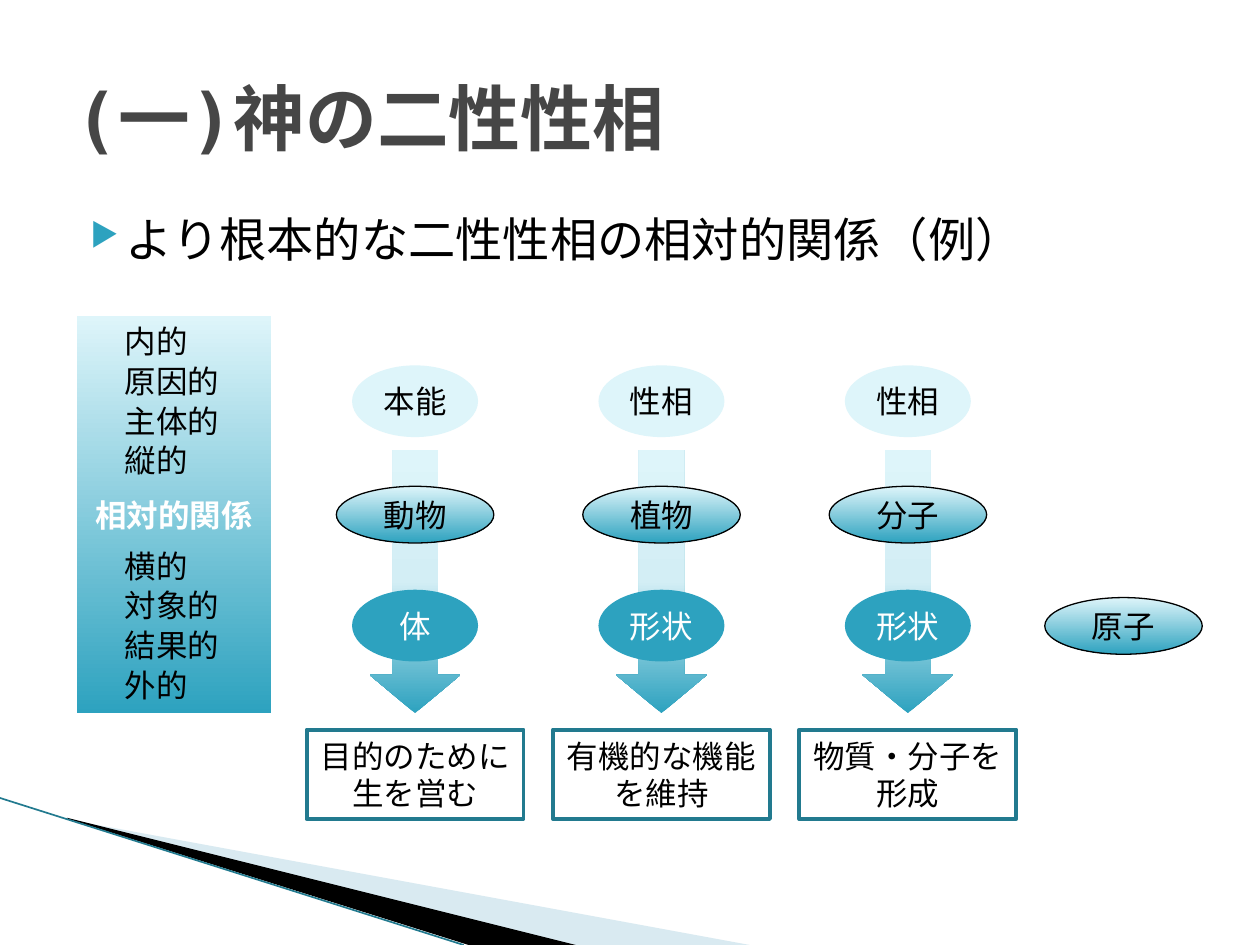
"""Build the slide on the dual characteristics and their relative relationships."""
from dataclasses import dataclass
from typing import NamedTuple, Optional

from lxml.etree import SubElement
from pptx import Presentation
from pptx.dml.color import RGBColor as RGB
from pptx.enum.shapes import MSO_CONNECTOR as Conn, MSO_SHAPE as Shape
from pptx.enum.text import MSO_ANCHOR as Anchor, PP_ALIGN as Align
from pptx.oxml.ns import qn
from pptx.util import Pt


@dataclass(frozen=True)
class Theme:
    pale: str = "DEF5FA"
    mist: str = "D3EEF5"
    teal: str = "2DA2BF"
    edge: str = "227A8F"
    wedge: str = "A0CBDC"
    title: str = "464646"
    black: str = "000000"
    white: str = "FFFFFF"
    font: str = "Arial"
    head_font: str = "DejaVu Sans Mono"
    title_size: int = 41
    body_size: int = 27
    label_size: int = 18


class Box(NamedTuple):
    x: float
    y: float
    w: float
    h: float


class Gradient(NamedTuple):
    stops: tuple
    angle: int


class Column(NamedTuple):
    upper: str
    name: str
    lower: str
    note: str


T = Theme()
DOWNWARD = Gradient(((0, T.pale), (100, T.teal)), 270)
ARROW = Gradient(((0, T.teal), (50, T.mist), (100, T.pale)), 90)
COLUMNS = (
    Column("本能", "動物", "体", "目的のために生を営む"),
    Column("性相", "植物", "形状", "有機的な機能を維持"),
    Column("性相", "分子", "形状", "物質・分子を形成"),
)
COLUMN_X, COLUMN_PITCH = 237.2, 140.8
LABEL_PITCH = 22.65
LABELS = (
    (180.7, ("内的", "原因的", "主体的", "縦的")),
    (308.9, ("横的", "対象的", "結果的", "外的")),
)


def write(sp, text: str, align=Align.CENTER, anchor=Anchor.MIDDLE, wrap=False, **formats):
    tf = sp.text_frame
    tf.word_wrap, tf.vertical_anchor = wrap, anchor
    p = tf.paragraphs[0]
    p.alignment = align
    r = p.add_run()
    r.text = text
    values = {"name": T.font, "size": T.label_size, "bold": False, **formats}
    r.font.color.rgb = RGB.from_string(values.pop("color", T.black))
    values["size"] = Pt(values["size"])
    for key, value in values.items():
        setattr(r.font, key, value)
    return p


def paint(sp, fill=None, line: Optional[str] = None, width: float = 0.75) -> None:
    sp.shadow.inherit = False
    if isinstance(fill, Gradient):
        sp.fill.gradient()
        sp.fill.gradient_angle = fill.angle
        stops = sp._element.spPr.find(".//" + qn("a:gsLst"))
        for old in list(stops):
            stops.remove(old)
        for pos, color in fill.stops:
            gs = SubElement(stops, qn("a:gs"), pos=str(pos * 1000))
            SubElement(gs, qn("a:srgbClr"), val=color)
    elif fill:
        sp.fill.solid()
        sp.fill.fore_color.rgb = RGB.from_string(fill)
    else:
        sp.fill.background()
    if line:
        sp.line.color.rgb = RGB.from_string(line)
        sp.line.width = Pt(width)
    else:
        sp.line.fill.background()


def add_shape(s, kind, box: Box, fill=None, line=None, width: float = 0.75):
    sp = s.shapes.add_shape(kind, *map(Pt, box))
    paint(sp, fill, line, width)
    return sp


def add_text(s, box: Box, text: str, **formats):
    return write(s.shapes.add_textbox(*map(Pt, box)), text, align=Align.LEFT, **formats)


def add_wedge(s, points: tuple, color: str):
    builder = s.shapes.build_freeform(*map(Pt, points[0]), scale=1.0)
    builder.add_line_segments([(Pt(x), Pt(y)) for x, y in points[1:]])
    sp = builder.convert_to_shape()
    paint(sp, color)
    return sp


def add_decoration(s) -> None:
    sp = add_wedge(s, ((39.6, 468.5), (428.4, 540), (328.3, 540), (39.6, 468)), T.wedge)
    SubElement(sp._element.spPr.find(".//" + qn("a:srgbClr")), qn("a:alpha"), val="40000")
    add_wedge(s, ((38.2, 467.3), (329, 540), (267.8, 540), (38.9, 468)), T.black)
    line = s.shapes.add_connector(Conn.STRAIGHT, Pt(0), Pt(456), Pt(265), Pt(540))
    line.line.color.rgb = RGB.from_string(T.edge)
    line.line.width = Pt(0.95)
    SubElement(line._element.spPr, qn("a:effectLst"))


def add_headings(s) -> None:
    p = add_text(s, Box(36, 116.6, 648, 356.4), "より根本的な二性性相の相対的関係（例）",
                 anchor=Anchor.TOP, wrap=True, name=T.head_font, size=T.body_size)
    pPr = p._p.get_or_add_pPr()
    for key, value in {"marL": Pt(28.8), "indent": Pt(-20.16)}.items():
        pPr.set(key, str(int(value)))
    SubElement(SubElement(pPr, qn("a:buClr")), qn("a:srgbClr"), val=T.teal)
    SubElement(pPr, qn("a:buSzPct"), val="68000")
    SubElement(pPr, qn("a:buChar"), char="▶")
    add_text(s, Box(36, 21.6, 648, 90), "(一)神の二性性相", wrap=True,
             name=T.head_font, size=T.title_size, bold=True, color=T.title)


def add_name(s, center: float, y: float, text: str) -> None:
    write(add_shape(s, Shape.OVAL, Box(center - 45, y, 90, 32.4), DOWNWARD, T.black), text)


def add_column(s, center: float, column: Column) -> None:
    arrow = add_shape(s, Shape.DOWN_ARROW, Box(center - 26, 257, 52, 150.5), ARROW)
    arrow.adjustments[1] = 0.42
    add_name(s, center, 277.9, column.name)
    for y, text, fill, color in ((208.8, column.upper, T.pale, T.black),
                                 (337, column.lower, T.teal, T.white)):
        write(add_shape(s, Shape.OVAL, Box(center - 36, y, 72, 41), fill), text, color=color)
    note = add_shape(s, Shape.RECTANGLE, Box(center - 62, 416.9, 124, 51.1),
                     line=T.edge, width=2.25)
    write(note, column.note, wrap=True)


def add_panel(s) -> None:
    panel = add_shape(s, Shape.RECTANGLE, Box(43.9, 180.7, 110.9, 226.8), DOWNWARD)
    write(panel, "相対的関係", bold=True, color=T.white)
    for top, labels in LABELS:
        for i, text in enumerate(labels):
            add_text(s, Box(64.1, top + i * LABEL_PITCH, 76, 28.8), text)


def main() -> None:
    prs = Presentation()
    prs.slide_width, prs.slide_height = Pt(720), Pt(540)
    s = prs.slides.add_slide(prs.slide_layouts[6])
    add_decoration(s)
    add_headings(s)
    for i, column in enumerate(COLUMNS):
        add_column(s, COLUMN_X + i * COLUMN_PITCH, column)
    add_panel(s)
    add_name(s, 642, 341.5, "原子")
    prs.save("out.pptx")


if __name__ == "__main__":
    main()
